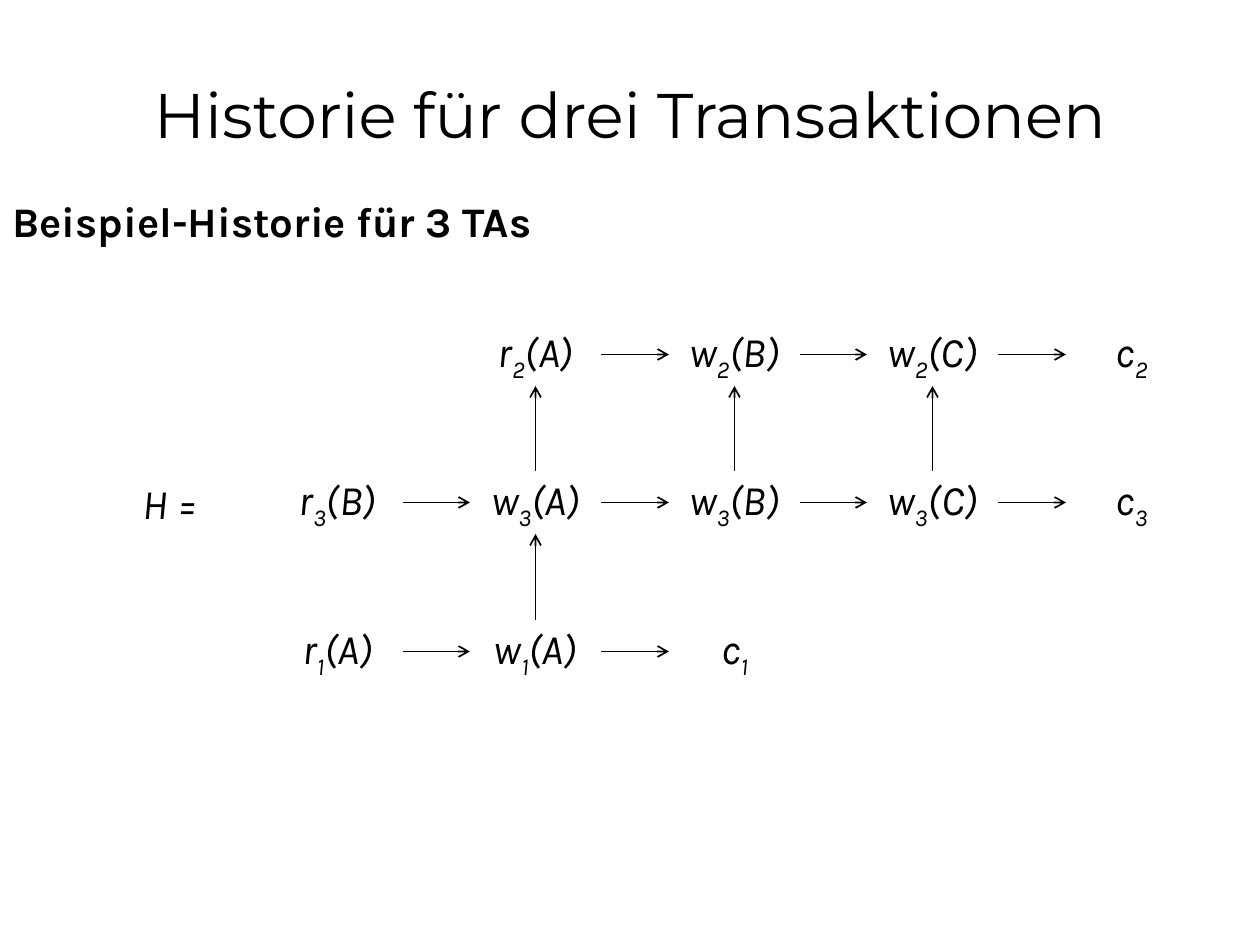
from lxml import etree
from pptx import Presentation
from pptx import util as u
from pptx.dml.color import RGBColor
from pptx.enum import shapes, text
from pptx.oxml.ns import qn

# Content: operations as (letter, transaction, data item), by grid column and row
TITLE = "Historie für drei Transaktionen"
HEADING = "Beispiel-Historie für 3 TAs"
HISTORY_LABEL = "H ="
ROWS = [
    {1: ("r", "2", "(A)"), 2: ("w", "2", "(B)"), 3: ("w", "2", "(C)"), 4: ("c", "2", "")},
    {0: ("r", "3", "(B)"), 1: ("w", "3", "(A)"), 2: ("w", "3", "(B)"),
     3: ("w", "3", "(C)"), 4: ("c", "3", "")},
    {0: ("r", "1", "(A)"), 1: ("w", "1", "(A)"), 2: ("c", "1", "")},
]
CONFLICTS = [  # (column, from row, to row)
    (1, 1, 0), (2, 1, 0), (3, 1, 0), (1, 2, 1),
]

BLACK = RGBColor(0, 0, 0)
PX = u.Inches(1) / 126
SLIDE_W, SLIDE_H = 1260, 945
NODE_W, NODE_H = 131, 63
GRID_LEFT, GRID_TOP = 272, 323
TWO_COLUMNS, TWO_ROWS = 397, 297
TOP, LEFT, BOTTOM, RIGHT = range(4)


def px(length):
    return u.Emu(round(length * PX))


def add_text(slide, box, parts, size=24, font="Karla", bold=False, italic=False,
             align=text.PP_ALIGN.CENTER, anchor=text.MSO_ANCHOR.MIDDLE):
    """Add a text box; the second part is set as a subscript."""
    label = slide.shapes.add_textbox(*map(px, box))
    frame = label.text_frame
    frame.word_wrap = True
    frame.vertical_anchor = anchor
    paragraph = frame.paragraphs[0]
    paragraph.alignment = align
    paragraph.font.size = u.Pt(size)
    paragraph.font.name = font
    paragraph.font.bold = bold
    paragraph.font.italic = italic
    paragraph.font.color.rgb = BLACK
    for index, part in enumerate(parts):
        if part:
            run = paragraph.add_run()
            run.text = part
            if index == 1:
                run._r.get_or_add_rPr().set("baseline", "-25000")
    return label


def add_arrow(slide, start, start_side, end, end_side):
    arrow = slide.shapes.add_connector(shapes.MSO_CONNECTOR.STRAIGHT, 0, 0, 0, 0)
    arrow.begin_connect(start, start_side)
    arrow.end_connect(end, end_side)
    arrow.line.color.rgb = BLACK
    arrow.line.width = u.Pt(1)
    etree.SubElement(arrow.line._get_or_add_ln(), qn("a:tailEnd"), type="arrow")
    etree.SubElement(arrow._element.spPr, qn("a:effectLst"))


def main():
    prs = Presentation()
    prs.slide_width, prs.slide_height = px(SLIDE_W), px(SLIDE_H)
    slide = prs.slides.add_slide(prs.slide_layouts[6])

    # Title and heading
    add_text(slide, (0, 0, SLIDE_W, 157), [TITLE], size=36, font="Montserrat",
             anchor=text.MSO_ANCHOR.BOTTOM)
    add_text(slide, (0, 189, SLIDE_W, NODE_H), [HEADING], bold=True,
             align=text.PP_ALIGN.LEFT, anchor=text.MSO_ANCHOR.TOP)

    # Operations on the grid
    nodes = {}
    for row, operations in enumerate(ROWS):
        for column, operation in operations.items():
            box = (GRID_LEFT + column * TWO_COLUMNS // 2,
                   GRID_TOP + row * TWO_ROWS // 2, NODE_W, NODE_H)
            nodes[row, column] = add_text(slide, box, operation, italic=True)
    add_text(slide, (105, GRID_TOP + TWO_ROWS // 2, NODE_W, NODE_H),
             [HISTORY_LABEL], italic=True)

    # Order within each transaction
    for (row, column), node in nodes.items():
        if (row, column + 1) in nodes:
            add_arrow(slide, node, RIGHT, nodes[row, column + 1], LEFT)

    # Conflicts between transactions
    for column, source, target in CONFLICTS:
        add_arrow(slide, nodes[source, column], TOP, nodes[target, column], BOTTOM)

    prs.save("out.pptx")


if __name__ == "__main__":
    main()
